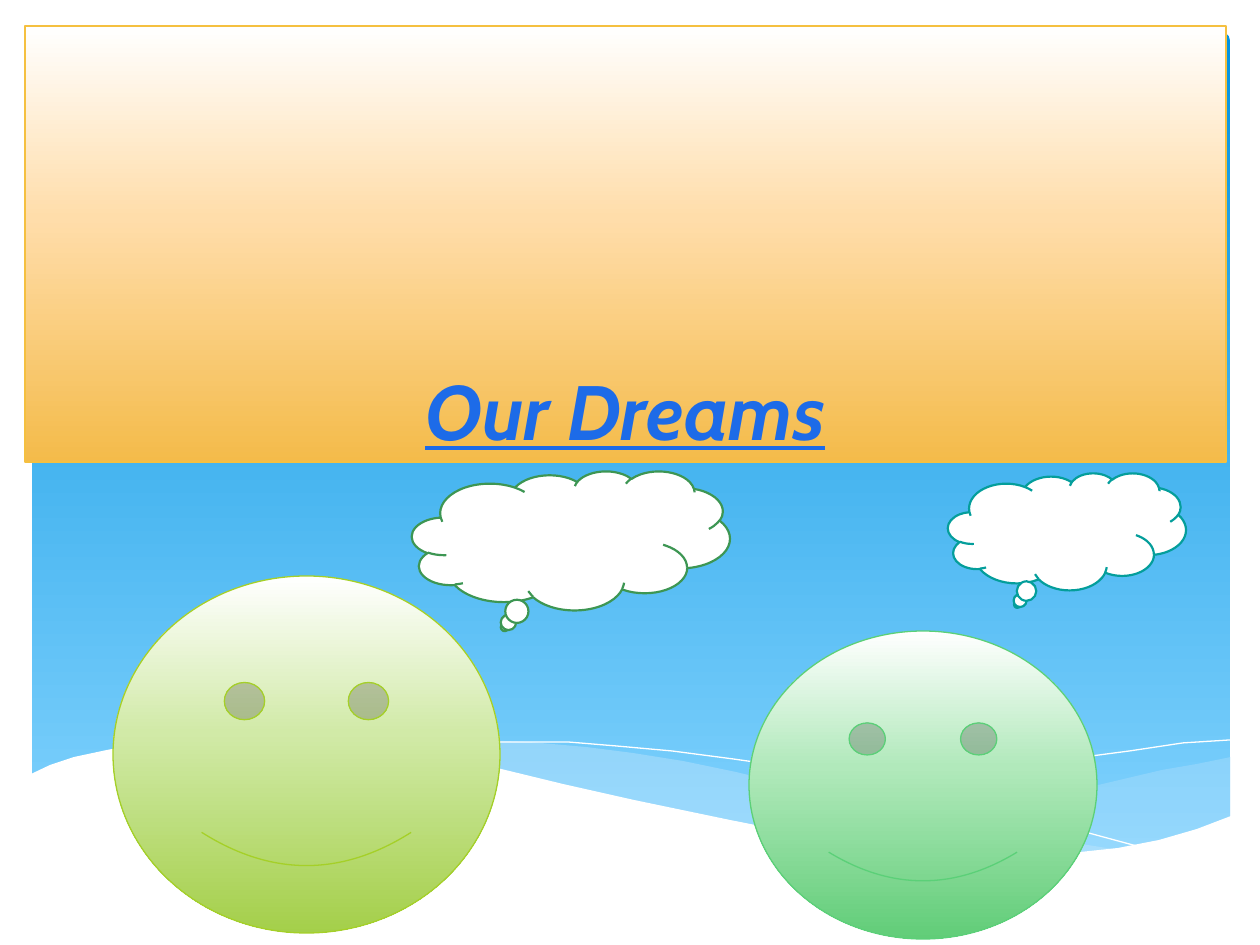
import pptx
import pptx.dml.color
import pptx.enum.shapes
import pptx.enum.text
import pptx.oxml
import pptx.oxml.ns
import pptx.util

PX = 914400 // 126
SHAPES = pptx.enum.shapes.MSO_SHAPE
COLORS = {
    "white": "FFFFFF", "sky": "0293E0", "horizon": "83D3FE", "mist": "C6E7FC",
    "title": "1D6BE8", "gold": "F5C040", "pale_gold": "FFDDAA", "deep_gold": "F4BB4A",
    "lime": "A5D028", "pale_lime": "D1EAA7", "deep_lime": "A4CF4A",
    "mint": "5BD078", "pale_mint": "B1E9BB", "deep_mint": "61CD78",
    "fern": "3D9653", "teal": "049E9B",
}
SKY = {"kind": SHAPES.ROUNDED_RECTANGLE, "box": (32, 32, 1198, 832),
       "stops": [(0, "sky"), (100, "horizon")]}

# Each wave: points, closed, fill, opacity in percent, line
WAVES = [
    ([(1231, 757), (1197, 764), (1162, 770), (1124, 779), (1086, 788), (1016, 805),
      (950, 819), (891, 830), (834, 840), (872, 845), (924, 852), (970, 856),
      (1027, 857), (1077, 854), (1121, 849), (1162, 840), (1198, 830), (1231, 818)],
     True, "mist", 29, None),
    ([(1126, 851), (1056, 840), (978, 827), (891, 809), (794, 786), (736, 772),
      (683, 761), (633, 753), (586, 747), (529, 742), (479, 740), (435, 741),
      (396, 743), (362, 747), (407, 753), (457, 761), (510, 772), (567, 786),
      (668, 809), (759, 828), (839, 842), (911, 852), (975, 856), (1045, 857),
      (1094, 854)],
     True, "mist", 40, None),
    ([(391, 752), (415, 748), (457, 743), (507, 742), (568, 742), (616, 746),
      (672, 751), (733, 759), (803, 769), (877, 782), (959, 800), (1048, 822),
      (1144, 848)],
     False, None, 100, "white"),
    ([(774, 830), (823, 816), (877, 803), (944, 788), (1017, 771), (1092, 756),
      (1130, 751), (1183, 743), (1230, 740)],
     False, None, 100, "white"),
    ([(1231, 816), (1197, 829), (1159, 840), (1118, 848), (1071, 853), (1019, 856),
      (959, 853), (892, 847), (816, 837), (730, 820), (634, 800), (563, 784),
      (493, 767), (428, 755), (368, 746), (315, 741), (266, 738), (203, 738),
      (150, 742), (107, 750), (74, 757), (50, 765), (29, 775), (29, 921), (1231, 921)],
     True, "white", 100, None),
]


def fade(middle, end):
    return [(0, "white"), (44, middle), (100, end)]


BANNER = {"kind": SHAPES.RECTANGLE, "box": (25, 26, 1201, 436),
          "stops": fade("pale_gold", "deep_gold"), "line": "gold"}
TITLE = "Our Dreams"
TITLE_FONT = {"name": "Cabin", "size": pptx.util.Pt(44), "bold": True,
              "italic": True, "underline": True}
DREAMERS = [
    {"kind": SHAPES.SMILEY_FACE, "box": (113, 576, 387, 357),
     "stops": fade("pale_lime", "deep_lime"), "line": "lime"},
    {"kind": SHAPES.SMILEY_FACE, "box": (749, 631, 348, 308),
     "stops": fade("pale_mint", "deep_mint"), "line": "mint"},
    {"kind": SHAPES.CLOUD_CALLOUT, "box": (412, 471, 318, 139),
     "fill": "white", "line": "fern", "width": 1.25},
    {"kind": SHAPES.CLOUD_CALLOUT, "box": (948, 473, 238, 117),
     "fill": "white", "line": "teal", "width": 1.25},
]


def rgb(name):
    return pptx.dml.color.RGBColor.from_string(COLORS[name])


def fill_gradient(shape, stops):
    """Fill from top to bottom with any number of (percent, colour) stops."""
    shape.fill.gradient()
    gradient = shape._element.spPr.find(pptx.oxml.ns.qn("a:gradFill"))
    stop_list = "".join(
        f'<a:gs pos="{percent * 1000}"><a:srgbClr val="{COLORS[name]}"/></a:gs>'
        for percent, name in stops)
    replacement = pptx.oxml.parse_xml(
        f'<a:gradFill {pptx.oxml.ns.nsdecls("a")} rotWithShape="1">'
        f'<a:gsLst>{stop_list}</a:gsLst><a:lin ang="5400000" scaled="0"/></a:gradFill>')
    gradient.getparent().replace(gradient, replacement)


def paint(shape, fill=None, stops=None, line=None, width=0.75, opacity=100):
    shape.shadow.inherit = False
    if stops:
        fill_gradient(shape, stops)
    elif fill:
        shape.fill.solid()
        shape.fill.fore_color.rgb = rgb(fill)
        if opacity < 100:
            color = shape._element.spPr.find(".//" + pptx.oxml.ns.qn("a:srgbClr"))
            color.append(pptx.oxml.parse_xml(
                f'<a:alpha {pptx.oxml.ns.nsdecls("a")} val="{opacity * 1000}"/>'))
    else:
        shape.fill.background()
    if line:
        shape.line.color.rgb = rgb(line)
        shape.line.width = pptx.util.Pt(width)
    else:
        shape.line.fill.background()


def add_preset(slide, kind, box, **style):
    shape = slide.shapes.add_shape(kind, *(value * PX for value in box))
    paint(shape, **style)
    return shape


def add_wave(slide, points, closed, fill, opacity, line):
    builder = slide.shapes.build_freeform(*points[0], scale=PX)
    builder.add_line_segments(points[1:], close=closed)
    paint(builder.convert_to_shape(), fill=fill, opacity=opacity, line=line, width=0)


def write_title(shape):
    frame = shape.text_frame
    frame.word_wrap = True
    frame.vertical_anchor = pptx.enum.text.MSO_ANCHOR.BOTTOM
    paragraph = frame.paragraphs[0]
    paragraph.alignment = pptx.enum.text.PP_ALIGN.CENTER
    run = paragraph.add_run()
    run.text = TITLE
    for name, value in TITLE_FONT.items():
        setattr(run.font, name, value)
    run.font.color.rgb = rgb("title")


def main():
    presentation = pptx.Presentation()
    presentation.slide_width = pptx.util.Inches(10)
    presentation.slide_height = pptx.util.Inches(7.5)
    slide = presentation.slides.add_slide(presentation.slide_layouts[6])
    sky = add_preset(slide, **SKY)
    sky.adjustments[0] = 0.01
    for wave in WAVES:
        add_wave(slide, *wave)
    write_title(add_preset(slide, **BANNER))
    for dreamer in DREAMERS:
        add_preset(slide, **dreamer)
    presentation.save("out.pptx")


if __name__ == "__main__":
    main()
